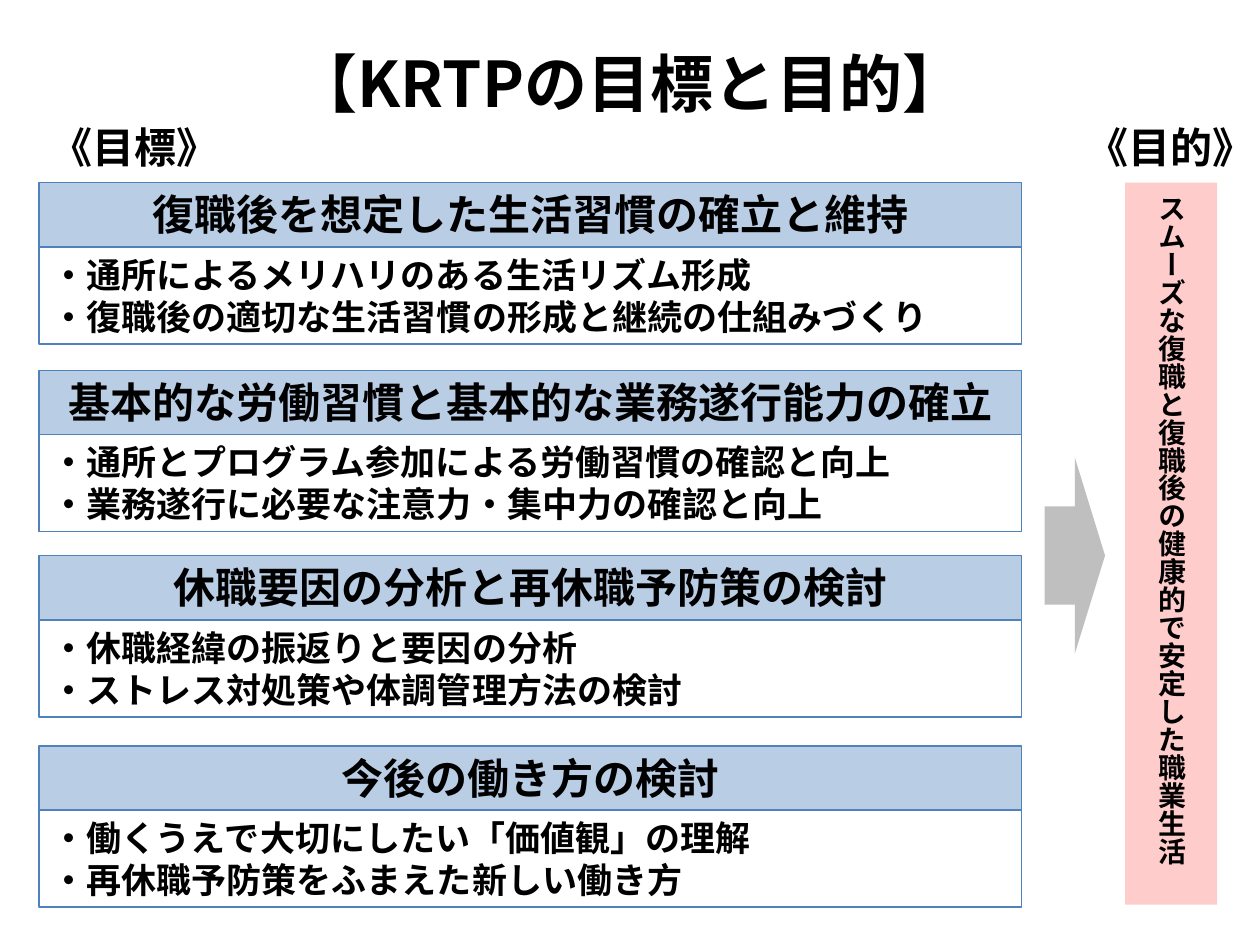
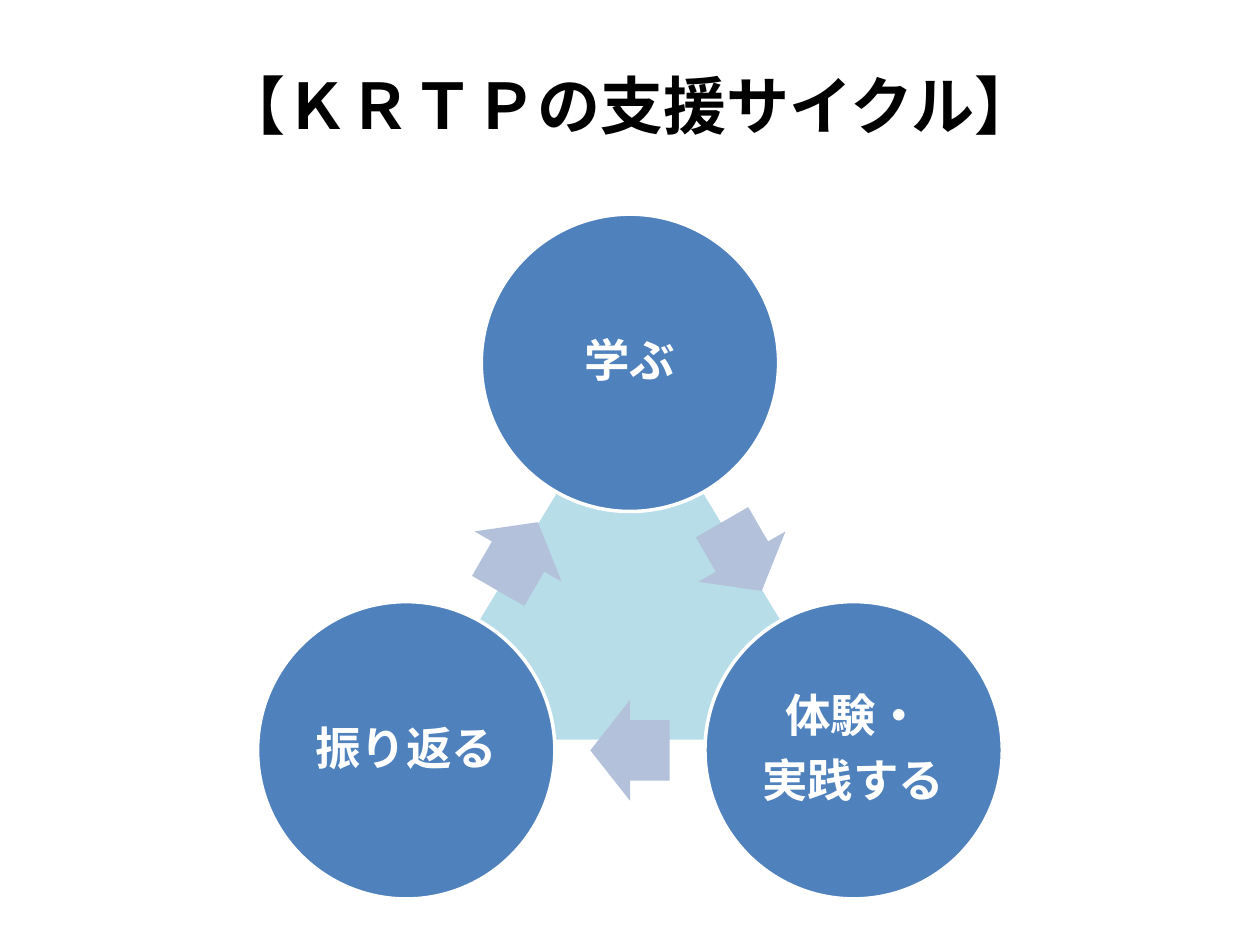
from math import cos, radians, sin

from lxml import etree
from pptx import Presentation
from pptx.dml.color import RGBColor
from pptx.enum.shapes import MSO_SHAPE
from pptx.enum.text import MSO_ANCHOR, PP_ALIGN
from pptx.oxml.ns import qn
from pptx.util import Inches, Pt

RECT = MSO_SHAPE.RECTANGLE
OVAL = MSO_SHAPE.OVAL
TRIANGLE = MSO_SHAPE.ISOSCELES_TRIANGLE
ARROW = MSO_SHAPE.RIGHT_ARROW
TOP, MIDDLE = MSO_ANCHOR.TOP, MSO_ANCHOR.MIDDLE
LEFT, CENTER = PP_ALIGN.LEFT, PP_ALIGN.CENTER

FONT = "Noto Sans CJK JP"
COLORS = {
    "ink": "000000",
    "white": "FFFFFF",
    "blue": "4F81BD",
    "header": "B9CDE5",
    "pink": "FFCCCC",
    "gray": "BFBFBF",
    "aqua": "B7DEE8",
    "lavender": "B3C1DB",
}

GOALS = [
    (1.45, "復職後を想定した生活習慣の確立と維持",
     ["・通所によるメリハリのある生活リズム形成",
      "・復職後の適切な生活習慣の形成と継続の仕組みづくり"]),
    (2.94, "基本的な労働習慣と基本的な業務遂行能力の確立",
     ["・通所とプログラム参加による労働習慣の確認と向上",
      "・業務遂行に必要な注意力・集中力の確認と向上"]),
    (4.41, "休職要因の分析と再休職予防策の検討",
     ["・休職経緯の振返りと要因の分析",
      "・ストレス対処策や体調管理方法の検討"]),
    (5.92, "今後の働き方の検討",
     ["・働くうえで大切にしたい「価値観」の理解",
      "・再休職予防策をふまえた新しい働き方"]),
]
PURPOSE = "スムーズな復職と復職後の健康的で安定した職業生活"
STEPS = [["学ぶ"], ["体験・", "実践する"], ["振り返る"]]

GOAL_LEFT, GOAL_WIDTH = 0.31, 7.8
HEADER_HEIGHT, DETAIL_HEIGHT = 0.51, 0.77
CYCLE_X, CYCLE_Y, CYCLE_RADIUS = 5, 4.93, 2.05
STEP_SIZE = 2.36
ARROW_WIDTH, ARROW_HEIGHT = 0.63, 0.8


def rgb(name):
    return RGBColor.from_string(COLORS[name])


def write(shape, lines, size, color="ink", align=LEFT, anchor=MIDDLE,
          inset=(0.1, 0.05), **spacing):
    frame = shape.text_frame
    across, down = map(Inches, inset)
    frame_format = {
        "word_wrap": True, "vertical_anchor": anchor,
        "margin_left": across, "margin_right": across,
        "margin_top": down, "margin_bottom": down,
    }
    for key, value in frame_format.items():
        setattr(frame, key, value)
    font_format = {"name": FONT, "size": Pt(size), "bold": True}
    for index, line in enumerate(lines):
        paragraph = frame.add_paragraph() if index else frame.paragraphs[0]
        for key, value in {"alignment": align, **spacing}.items():
            setattr(paragraph, key, value)
        run = paragraph.add_run()
        run.text = line
        for key, value in font_format.items():
            setattr(run.font, key, value)
        run.font.color.rgb = rgb(color)
        east_asian = etree.SubElement(run.font._element, qn("a:ea"))
        east_asian.set("typeface", FONT)


def add_label(slide, box, text, size, **style):
    label = slide.shapes.add_textbox(*map(Inches, box))
    write(label, [text], size, **style)


def add_block(slide, kind, box, fill=None, line=None, line_width=0.75):
    block = slide.shapes.add_shape(kind, *map(Inches, box))
    block.shadow.inherit = False
    if fill:
        block.fill.solid()
        block.fill.fore_color.rgb = rgb(fill)
    else:
        block.fill.background()
    if line:
        block.line.color.rgb = rgb(line)
        block.line.width = Pt(line_width)
    else:
        block.line.fill.background()
    return block


def add_title(slide, text, top, height, **style):
    add_label(slide, (0, top, 10, height), text, 36, align=CENTER, **style)


def add_goal(slide, top, heading, details):
    detail_box = (GOAL_LEFT, top + HEADER_HEIGHT, GOAL_WIDTH, DETAIL_HEIGHT)
    detail = add_block(slide, RECT, detail_box, line="blue")
    write(detail, details, 20, anchor=TOP)
    header_box = (GOAL_LEFT, top, GOAL_WIDTH, HEADER_HEIGHT)
    header = add_block(slide, RECT, header_box, "header", "blue")
    write(header, [heading], 24, align=CENTER, anchor=TOP)


def add_purpose(slide):
    purpose = add_block(slide, RECT, (8.93, 1.45, 0.73, 5.73), "pink")
    write(purpose, [PURPOSE], 16, align=CENTER)
    purpose.text_frame._txBody.bodyPr.set("vert", "eaVert")
    add_block(slide, ARROW, (8.29, 3.63, 0.48, 1.56), "gray")


def cycle_box(angle, radius, width, height):
    x = CYCLE_X + radius * sin(radians(angle))
    y = CYCLE_Y - radius * cos(radians(angle))
    return x - width / 2, y - height / 2, width, height


def add_step(slide, angle, lines):
    box = cycle_box(angle, CYCLE_RADIUS, STEP_SIZE, STEP_SIZE)
    step = add_block(slide, OVAL, box, "blue", "white", 2)
    write(step, lines, 26, "white", CENTER, inset=(0.04, 0.04),
          line_spacing=0.9, space_after=Pt(9))


def add_cycle_arrow(slide, angle):
    box = cycle_box(angle, CYCLE_RADIUS / 2, ARROW_WIDTH, ARROW_HEIGHT)
    arrow = add_block(slide, ARROW, box, "lavender")
    arrow.adjustments[0] = 0.6
    arrow.adjustments[1] = 0.5
    arrow.rotation = angle


def build_goals(slide):
    for left, text in ((0.31, "《目標》"), (8.53, "《目的》")):
        add_label(slide, (left, 0.69, 1.69, 1), text, 24,
                  inset=(0.09, 0.04), line_spacing=0.9)
    add_title(slide, "【KRTPの目標と目的】", 0.01, 1.37, line_spacing=0.9)
    for goal in GOALS:
        add_goal(slide, *goal)
    add_purpose(slide)


def build_cycle(slide):
    add_block(slide, TRIANGLE, (3.23, 2.96, 3.54, 2.91), "aqua")
    add_title(slide, "【ＫＲＴＰの支援サイクル】", 0, 1.65)
    turn = 360 / len(STEPS)
    for index, lines in enumerate(STEPS):
        add_step(slide, index * turn, lines)
        add_cycle_arrow(slide, (index + 0.5) * turn)


def main():
    deck = Presentation()
    deck.slide_width, deck.slide_height = Inches(10), Inches(7.5)
    blank = deck.slide_layouts[6]
    for build in (build_goals, build_cycle):
        build(deck.slides.add_slide(blank))
    deck.save("out.pptx")


if __name__ == "__main__":
    main()
